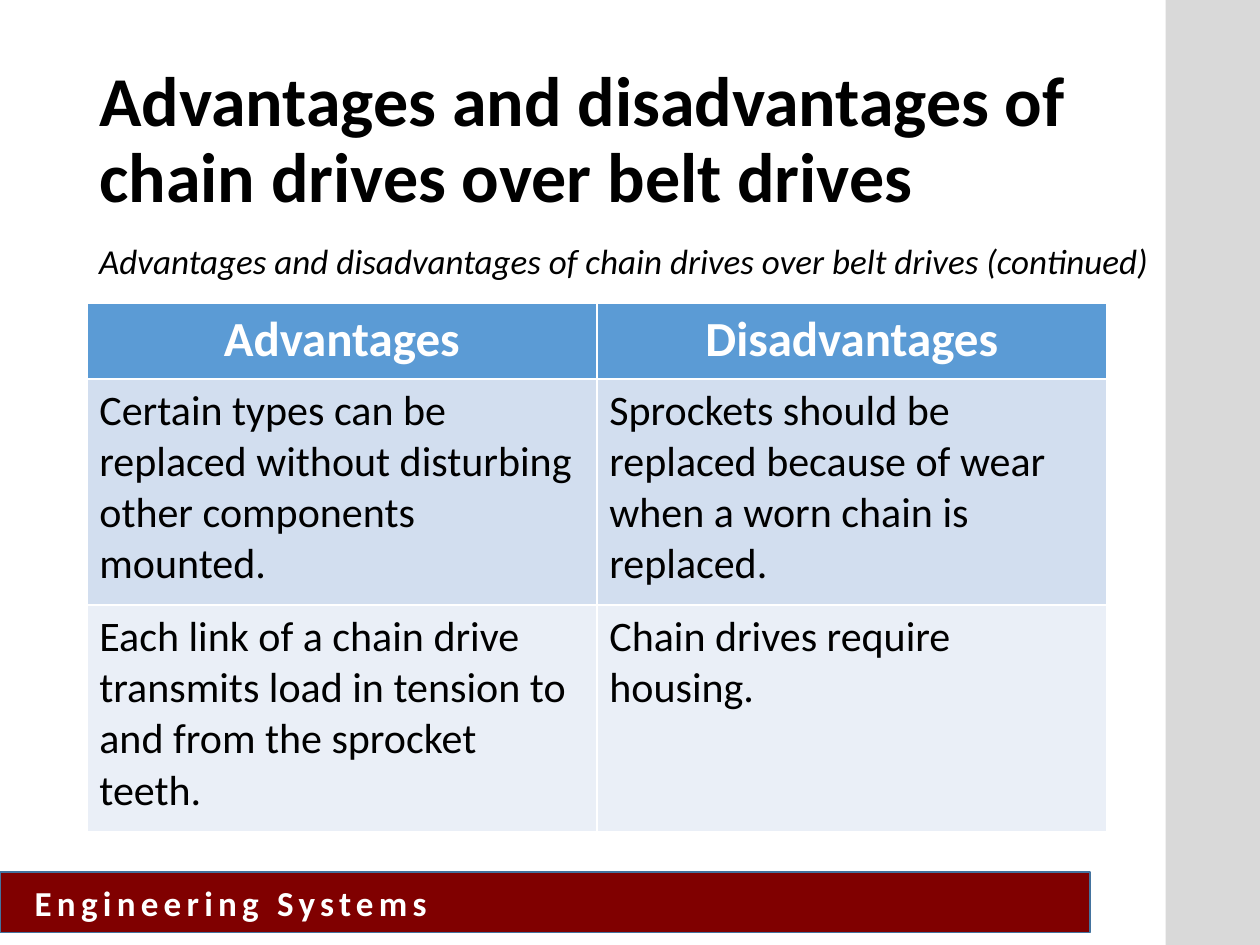
import dataclasses
import typing

import pptx
import pptx.dml.color
import pptx.enum.shapes
import pptx.enum.text
import pptx.util

Cm = pptx.util.Cm
Pt = pptx.util.Pt
ALIGN = pptx.enum.text.PP_ALIGN
ANCHOR = pptx.enum.text.MSO_ANCHOR

COLORS = {
    "text": "000000",
    "light": "FFFFFF",
    "banner": "800000",
    "banner_edge": "43739E",
    "sidebar": "D9D9D9",
    "header": "5B9BD5",
    "first_row": "D2DEEF",
    "second_row": "EAEFF7",
}
MARGIN = 1.75
COLUMN_WIDTH = 10.28


@dataclasses.dataclass(frozen=True)
class Box:
    left: float
    top: float
    width: float
    height: float

    def lengths(self) -> tuple[int, int, int, int]:
        return Cm(self.left), Cm(self.top), Cm(self.width), Cm(self.height)


@dataclasses.dataclass(frozen=True)
class Panel:
    box: Box
    fill: str
    edge: typing.Optional[str] = None


@dataclasses.dataclass(frozen=True)
class Row:
    texts: tuple[str, str]
    height: float
    fill: str
    size: int = 24
    color: str = "text"
    bold: bool = False
    align: ALIGN = ALIGN.LEFT


BANNER = Panel(Box(0, 17.58, 21.97, 1.22), "banner", "banner_edge")
SIDEBAR = Panel(Box(23.5, 0, 1.9, 19.05), "sidebar")
ROWS = (
    Row(("Advantages", "Disadvantages"), 1.52, "header", 28, "light", True, ALIGN.CENTER),
    Row(
        (
            "Certain types can be replaced without disturbing other components mounted.",
            "Sprockets should be replaced because of wear when a worn chain is replaced.",
        ),
        4.56,
        "first_row",
    ),
    Row(
        (
            "Each link of a chain drive transmits load in tension to and from the sprocket teeth.",
            "Chain drives require housing.",
        ),
        4.56,
        "second_row",
    ),
)


def rgb(name: str) -> pptx.dml.color.RGBColor:
    return pptx.dml.color.RGBColor.from_string(COLORS[name])


def write(frame, text: str, size: int, color: str = "text", bold: bool = False,
          italic: bool = False, align: ALIGN = ALIGN.LEFT):
    frame.text = text
    frame.word_wrap = True
    paragraph = frame.paragraphs[0]
    paragraph.alignment = align
    font = paragraph.font
    font.name = "Calibri"
    font.size = Pt(size)
    font.bold = bold
    font.italic = italic
    font.color.rgb = rgb(color)
    return paragraph


def draw_panel(slide, panel: Panel):
    shape = slide.shapes.add_shape(
        pptx.enum.shapes.MSO_SHAPE.RECTANGLE, *panel.box.lengths())
    shape.shadow.inherit = False
    shape.fill.solid()
    shape.fill.fore_color.rgb = rgb(panel.fill)
    if panel.edge:
        shape.line.color.rgb = rgb(panel.edge)
        shape.line.width = Pt(1)
    else:
        shape.line.fill.background()
    return shape


def draw_banner(slide) -> None:
    frame = draw_panel(slide, BANNER).text_frame
    frame.vertical_anchor = ANCHOR.MIDDLE
    frame.margin_left = Cm(0.7)
    paragraph = write(frame, "Engineering Systems", 20, "light", bold=True)
    paragraph.runs[0].font._element.set("spc", "300")


def draw_title(slide) -> None:
    title = slide.shapes.title
    title.left, title.top, title.width, title.height = Box(MARGIN, 1.02, 21.44, 3.68).lengths()
    frame = title.text_frame
    frame.auto_size = pptx.enum.text.MSO_AUTO_SIZE.NONE
    frame.vertical_anchor = ANCHOR.MIDDLE
    paragraph = write(
        frame, "Advantages and disadvantages of chain drives over belt drives", 40, bold=True)
    paragraph.line_spacing = 0.9


def draw_subtitle(slide) -> None:
    subtitle = slide.shapes.add_textbox(*Box(MARGIN, 4.7, 21.74, 1.12).lengths())
    write(
        subtitle.text_frame,
        "Advantages and disadvantages of chain drives over belt drives (continued)",
        20,
        italic=True,
    )


def draw_comparison(slide, rows: tuple[Row, ...]) -> None:
    columns = len(rows[0].texts)
    box = Box(MARGIN, 6.12, columns * COLUMN_WIDTH, sum(row.height for row in rows))
    table = slide.shapes.add_table(len(rows), columns, *box.lengths()).table
    for column in table.columns:
        column.width = Cm(COLUMN_WIDTH)
    for row, table_row in zip(rows, table.rows):
        table_row.height = Cm(row.height)
        for text, cell in zip(row.texts, table_row.cells):
            cell.fill.solid()
            cell.fill.fore_color.rgb = rgb(row.fill)
            write(cell.text_frame, text, row.size, row.color, row.bold, align=row.align)


def main() -> None:
    presentation = pptx.Presentation()
    presentation.slide_width = Cm(25.4)
    presentation.slide_height = Cm(19.05)
    slide = presentation.slides.add_slide(presentation.slide_layouts[5])
    draw_banner(slide)
    draw_panel(slide, SIDEBAR)
    draw_title(slide)
    draw_comparison(slide, ROWS)
    draw_subtitle(slide)
    presentation.save("out.pptx")


if __name__ == "__main__":
    main()
